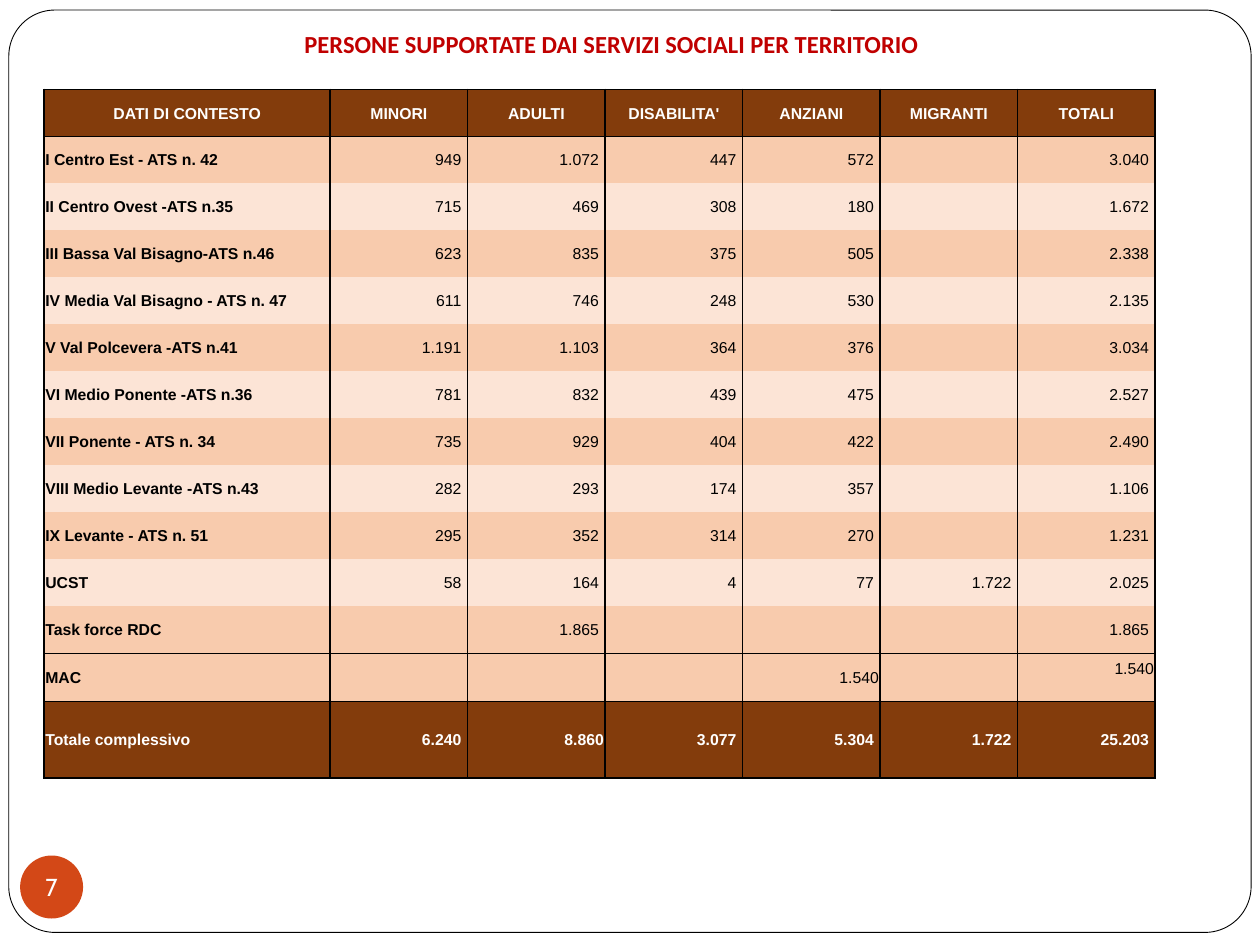
from lxml import etree
from pptx import Presentation
from pptx.dml.color import RGBColor
from pptx.enum.shapes import MSO_SHAPE
from pptx.enum.text import MSO_ANCHOR, PP_ALIGN
from pptx.oxml.ns import qn
from pptx.util import Inches, Pt

BLACK = RGBColor(0x00, 0x00, 0x00)
WHITE = RGBColor(0xFF, 0xFF, 0xFF)
RED = RGBColor(0xC0, 0x00, 0x00)
ORANGE = RGBColor(0xD3, 0x48, 0x17)
BROWN = RGBColor(0x83, 0x3C, 0x0C)
PEACH = RGBColor(0xF8, 0xCB, 0xAD)
LIGHT_PEACH = RGBColor(0xFC, 0xE4, 0xD6)

ROUNDED, OVAL = MSO_SHAPE.ROUNDED_RECTANGLE, MSO_SHAPE.OVAL
LEFT, CENTER, RIGHT = PP_ALIGN.LEFT, PP_ALIGN.CENTER, PP_ALIGN.RIGHT
TOP, MIDDLE = MSO_ANCHOR.TOP, MSO_ANCHOR.MIDDLE

GRID_COLUMNS, GRID_ROWS = 100, 75

HEADERS = ["DATI DI CONTESTO", "MINORI", "ADULTI", "DISABILITA'", "ANZIANI",
           "MIGRANTI", "TOTALI"]
TERRITORIES = [
    ["I Centro Est - ATS n. 42", "949", "1.072", "447", "572", "", "3.040"],
    ["II Centro Ovest -ATS n.35", "715", "469", "308", "180", "", "1.672"],
    ["III Bassa Val Bisagno-ATS n.46", "623", "835", "375", "505", "", "2.338"],
    ["IV Media Val Bisagno - ATS n. 47", "611", "746", "248", "530", "", "2.135"],
    ["V Val Polcevera -ATS n.41", "1.191", "1.103", "364", "376", "", "3.034"],
    ["VI Medio Ponente -ATS n.36", "781", "832", "439", "475", "", "2.527"],
    ["VII Ponente - ATS n. 34", "735", "929", "404", "422", "", "2.490"],
    ["VIII Medio Levante -ATS n.43", "282", "293", "174", "357", "", "1.106"],
    ["IX Levante - ATS n. 51", "295", "352", "314", "270", "", "1.231"],
    ["UCST", "58", "164", "4", "77", "1.722", "2.025"],
    ["Task force RDC", "", "1.865", "", "", "", "1.865"],
]
MAC = ["MAC", "", "", "", "1.540", "", "1.540"]
TOTALS = ["Totale complessivo", "6.240", "8.860", "3.077", "5.304", "1.722", "25.203"]
TABLE_ROWS = [HEADERS, *TERRITORIES, MAC, TOTALS]
MAC_ROW, TOTAL_ROW = len(TABLE_ROWS) - 2, len(TABLE_ROWS) - 1
LAST_COLUMN = len(HEADERS) - 1
FLUSH_CELLS = {(MAC_ROW, 4), (MAC_ROW, LAST_COLUMN), (TOTAL_ROW, 2)}


def write_text(frame, text, *, font="Arial", size=9, color=BLACK, bold=False, align=LEFT):
    paragraph = frame.paragraphs[0]
    paragraph.alignment = align
    run = paragraph.add_run()
    run.text = text
    run.font.name = font
    run.font.size = Pt(size)
    run.font.bold = bold
    run.font.color.rgb = color


def set_borders(cell, top, bottom):
    """Rule both sides of a cell, and its top and bottom where asked."""
    properties = cell._tc.get_or_add_tcPr()
    for side, ruled in (("L", True), ("R", True), ("T", top), ("B", bottom)):
        line = etree.SubElement(properties, qn(f"a:ln{side}"), w=str(Pt(1)))
        if ruled:
            fill = etree.SubElement(line, qn("a:solidFill"))
            etree.SubElement(fill, qn("a:srgbClr"), val=str(BLACK))
        else:
            etree.SubElement(line, qn("a:noFill"))


class SlideBuilder:
    """Places elements by columns and rows of the slide's grid."""

    def __init__(self, presentation):
        self.column = presentation.slide_width / GRID_COLUMNS
        self.row = presentation.slide_height / GRID_ROWS
        self.slide = presentation.slides.add_slide(presentation.slide_layouts[6])

    def box(self, left, top, width, height):
        return (round(left * self.column), round(top * self.row),
                round(width * self.column), round(height * self.row))

    def shape(self, kind, place, fill, line=None):
        shape = self.slide.shapes.add_shape(kind, *self.box(*place))
        shape.shadow.inherit = False
        shape.fill.solid()
        shape.fill.fore_color.rgb = fill
        if line is None:
            shape.line.fill.background()
        else:
            shape.line.color.rgb = line
            shape.line.width = Pt(0.5)
        return shape

    def badge(self, text, place):
        frame = self.shape(OVAL, place, ORANGE).text_frame
        frame.margin_left = frame.margin_right = frame.margin_top = frame.margin_bottom = 0
        frame.word_wrap = False
        frame.vertical_anchor = MIDDLE
        write_text(frame, text, font="Cabin", size=14, color=WHITE, align=CENTER)

    def title(self, text, place):
        frame = self.slide.shapes.add_textbox(*self.box(*place)).text_frame
        frame.word_wrap = True
        frame.vertical_anchor = TOP
        write_text(frame, text, font="Calibri", size=14, color=RED, bold=True, align=CENTER)

    def table(self, place, label_width, mac_height, total_height):
        _, _, width, height = place
        table = self.slide.shapes.add_table(
            len(TABLE_ROWS), len(HEADERS), *self.box(*place)).table
        table.first_row = table.horz_banding = False

        value_width = (width - label_width) / LAST_COLUMN
        for index, column in enumerate(table.columns):
            column.width = round((value_width if index else label_width) * self.column)
        special_heights = {MAC_ROW - 1: mac_height, MAC_ROW: mac_height,
                           TOTAL_ROW: total_height}
        plain_height = ((height - sum(special_heights.values()))
                        / (len(TABLE_ROWS) - len(special_heights)))
        for index, row in enumerate(table.rows):
            row.height = round(special_heights.get(index, plain_height) * self.row)

        for row, values in enumerate(TABLE_ROWS):
            for column, text in enumerate(values):
                self.table_cell(table.cell(row, column), row, column, text)

    def table_cell(self, cell, row, column, text):
        emphasized = row in (0, TOTAL_ROW)
        set_borders(cell, top=row in (0, 1, MAC_ROW, TOTAL_ROW),
                    bottom=row in (0, MAC_ROW - 1, MAC_ROW, TOTAL_ROW))
        cell.fill.solid()
        if emphasized:
            cell.fill.fore_color.rgb = BROWN
        else:
            cell.fill.fore_color.rgb = PEACH if row % 2 or row == MAC_ROW else LIGHT_PEACH

        cell.vertical_anchor = MIDDLE
        cell.margin_left = cell.margin_right = cell.margin_top = Inches(0.01)
        cell.margin_bottom = 0
        if row and column and (row, column) not in FLUSH_CELLS:
            cell.margin_right = Inches(0.05)
        if (row, column) == (MAC_ROW, LAST_COLUMN):
            cell.margin_bottom = Inches(0.14)
        if text:
            align = CENTER if row == 0 else RIGHT if column else LEFT
            write_text(cell.text_frame, text, color=WHITE if emphasized else BLACK,
                       bold=emphasized or column == 0, align=align)


def main():
    presentation = Presentation()
    presentation.slide_width, presentation.slide_height = Inches(10), Inches(7.5)
    builder = SlideBuilder(presentation)
    frame = builder.shape(ROUNDED, (0.7, 0.8, 98.6, 73.2), WHITE, line=BLACK)
    frame.adjustments[0] = 0.05
    builder.badge("7", (1.6, 67.9, 5, 5))
    builder.title("PERSONE SUPPORTATE DAI SERVIZI SOCIALI PER TERRITORIO",
                  (2.1, 1.8, 92.9, 5.4))
    builder.table((3.5, 7.1, 88.2, 54.7), label_width=22.7, mac_height=3.8, total_height=6.1)
    presentation.save("out.pptx")


if __name__ == "__main__":
    main()
